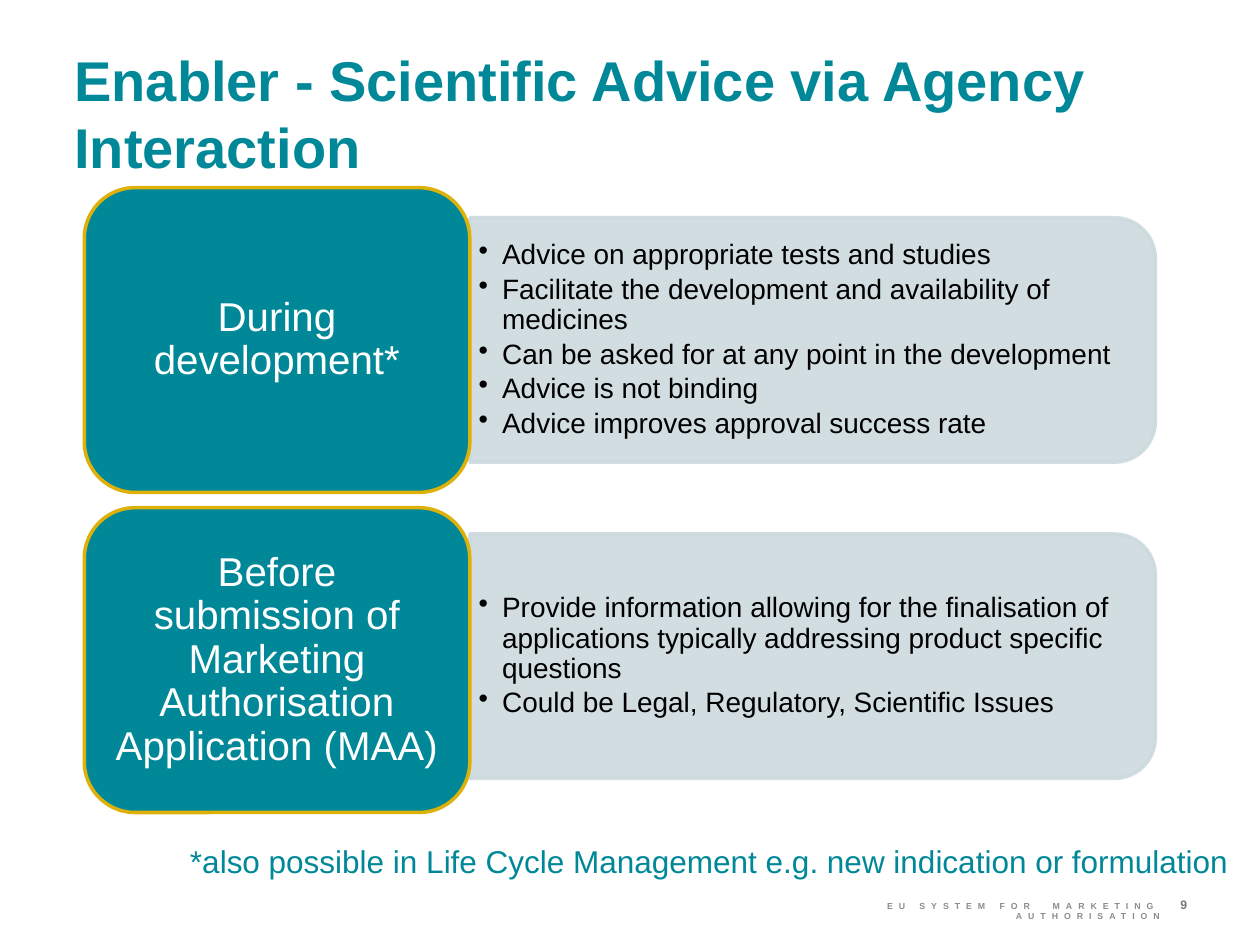
from pptx import Presentation
from pptx.dml.color import RGBColor
from pptx.enum import shapes, text
from pptx.oxml import parse_xml
from pptx.oxml.ns import nsdecls, qn
from pptx.util import Pt

TEAL = RGBColor(0x00, 0x88, 0x98)
GOLD = RGBColor(0xDD, 0xB1, 0x0A)
MIST = RGBColor(0xCC, 0xDA, 0xDD)
WHITE = RGBColor(0xFF, 0xFF, 0xFF)
BLACK = RGBColor(0x00, 0x00, 0x00)
FOOTER_GREY = RGBColor(0x8C, 0x8C, 0x8C)
NUMBER_GREY = RGBColor(0x77, 0x78, 0x7B)

CARD_WIDTH = 220.3
STAGES = [
    ("During development*", [
        "Advice on appropriate tests and studies",
        "Facilitate the development and availability of medicines",
        "Can be asked for at any point in the development",
        "Advice is not binding",
        "Advice improves approval success rate",
    ]),
    ("Before submission of Marketing Authorisation Application (MAA)", [
        "Provide information allowing for the finalisation of applications "
        "typically addressing product specific questions",
        "Could be Legal, Regulatory, Scientific Issues",
    ]),
]


def write(frame, lines, size, color, bold=False, margins=(0, 0),
          anchor=text.MSO_ANCHOR.TOP, **paragraph_format):
    """Fill a text frame; margins are (sides, top and bottom) in points."""
    side, edge = (Pt(m) for m in margins)
    settings = dict(word_wrap=True, auto_size=text.MSO_AUTO_SIZE.NONE,
                    vertical_anchor=anchor, margin_left=side,
                    margin_right=side, margin_top=edge, margin_bottom=edge)
    for name, value in settings.items():
        setattr(frame, name, value)
    frame.text = "\n".join(lines)
    for paragraph in frame.paragraphs:
        for name, value in paragraph_format.items():
            setattr(paragraph, name, value)
        font = paragraph.runs[0].font
        for name, value in dict(name="Arial", size=Pt(size), bold=bold).items():
            setattr(font, name, value)
        font.color.rgb = color


def paint(shape, fill, line):
    shape.shadow.inherit = False
    shape.fill.solid()
    shape.fill.fore_color.rgb = fill
    shape.line.color.rgb = line
    shape.line.width = Pt(2)


def add_text(slide, box, *args, **kwargs):
    label = slide.shapes.add_textbox(*map(Pt, box))
    write(label.text_frame, *args, **kwargs)
    return label


def add_title(slide, box, wording):
    title = slide.shapes.title
    title.left, title.top, title.width, title.height = map(Pt, box)
    write(title.text_frame, [wording], 32, TEAL, bold=True,
          alignment=text.PP_ALIGN.LEFT)


def add_advice_panel(slide, box, points):
    left, top, width, height = box
    # Panel: top-rounded rectangle turned so its round corners face right
    panel = slide.shapes.add_shape(
        shapes.MSO_SHAPE.ROUND_2_SAME_RECTANGLE,
        Pt(left + (width - height) / 2), Pt(top + (height - width) / 2),
        Pt(height), Pt(width))
    panel.rotation = 90
    paint(panel, MIST, MIST)
    for color in panel._element.spPr.iter(qn("a:srgbClr")):
        color.append(parse_xml(f'<a:alpha {nsdecls("a")} val="90000"/>'))

    # Bulleted advice
    inset = 6.8
    advice = add_text(slide, (left, top + inset, width - inset, height - 2 * inset),
                      points, 16, BLACK, margins=(5, 2.5),
                      anchor=text.MSO_ANCHOR.MIDDLE,
                      line_spacing=0.9, space_after=Pt(2.5))
    for paragraph in advice.text_frame.paragraphs:
        properties = paragraph._p.get_or_add_pPr()
        properties.set("marL", str(Pt(13.5)))
        properties.set("indent", str(Pt(-13.5)))
        properties.append(parse_xml(f'<a:buChar {nsdecls("a")} char="•"/>'))


def add_stage_card(slide, box, stage):
    card = slide.shapes.add_shape(shapes.MSO_SHAPE.ROUNDED_RECTANGLE,
                                  *map(Pt, box))
    paint(card, TEAL, GOLD)
    write(card.text_frame, [stage], 23, WHITE, margins=(7.2, 3.6),
          anchor=text.MSO_ANCHOR.MIDDLE, line_spacing=0.9,
          alignment=text.PP_ALIGN.CENTER)


def add_stages(slide, box):
    left, top, width, height = box
    gap = 8.7
    card_height = (height - gap * (len(STAGES) - 1)) / len(STAGES)
    panel_height, panel_pitch = 139.7, 180.7
    first_panel_top = top + (card_height - panel_height) / 2
    for row, (stage, points) in enumerate(STAGES):
        add_advice_panel(slide, (left + CARD_WIDTH,
                                 first_panel_top + row * panel_pitch,
                                 width - CARD_WIDTH, panel_height), points)
        add_stage_card(slide, (left, top + row * (card_height + gap),
                               CARD_WIDTH, card_height), stage)


def add_footer(slide, box):
    left, top, width, height = box
    number_width = 31
    running = add_text(slide, (left, top + 2, 221, height),
                       ["EU SYSTEM FOR  MARKETING AUTHORISATION"],
                       5, FOOTER_GREY, bold=True,
                       alignment=text.PP_ALIGN.RIGHT)
    run = running.text_frame.paragraphs[0].runs[0]
    run.font._element.set("spc", "340")
    add_text(slide, (left + width - number_width, top, number_width, height),
             ["9"], 7, NUMBER_GREY, bold=True)


def main():
    deck = Presentation()
    deck.slide_width, deck.slide_height = Pt(720), Pt(540)
    slide = deck.slides.add_slide(deck.slide_layouts[5])
    add_title(slide, (42.5, 26, 641, 40),
              "Enabler - Scientific Advice via Agency Interaction")
    add_stages(slide, (48.2, 107.2, 612, 357.1))
    # Footnote
    add_text(slide, (101.5, 477.4, 618, 29),
             ["*also possible in Life Cycle Management e.g. "
              "new indication or formulation"],
             18, TEAL, margins=(7.2, 3.6))
    add_footer(slide, (442, 512.6, 263.6, 12))
    deck.save("out.pptx")


if __name__ == "__main__":
    main()
